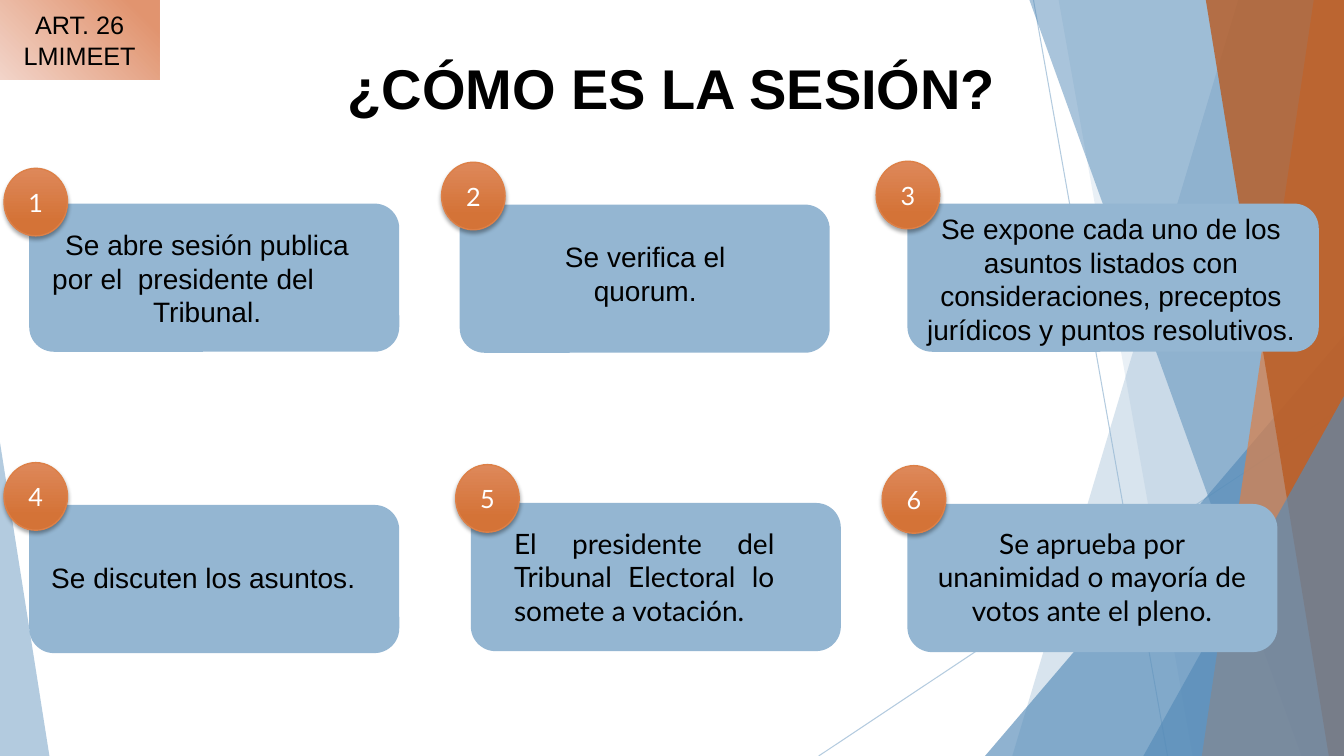
from lxml.etree import SubElement
from pptx import Presentation
from pptx.dml.color import RGBColor
from pptx.enum.shapes import MSO_CONNECTOR, MSO_SHAPE
from pptx.enum.text import MSO_ANCHOR, MSO_AUTO_SIZE, PP_ALIGN
from pptx.oxml.ns import qn
from pptx.util import Pt

PX = 9144
WIDTH, HEIGHT = 1333, 750
COLORS = {
    "sky": "94B6D2", "blue": "558BB8", "orange": "DD8047", "rust": "B95B22",
    "badge_top": "DE885A", "badge_bottom": "D47337",
    "tag_light": "F2D4C9", "tag_dark": "E1946F",
    "black": "000000", "white": "FFFFFF",
}
FORMATS = {
    "title": {"name": "Arial", "size": Pt(40), "bold": True},
    "arial": {"name": "Arial", "size": Pt(20)},
    "lato": {"name": "Lato", "size": Pt(20)},
    "badge": {"name": "Lato", "size": Pt(18)},
    "tag": {"name": "Arial", "size": Pt(18)},
}
BOX_HEIGHT = 147
BADGE_SIZE = (63, 67)
LEFT, CENTER, JUSTIFY = PP_ALIGN.LEFT, PP_ALIGN.CENTER, PP_ALIGN.JUSTIFY


class SlideBuilder:
    """Draw styled elements on one slide, with lengths in px."""

    def __init__(self, presentation):
        self.slide = presentation.slides.add_slide(presentation.slide_layouts[5])
        self.shapes = self.slide.shapes

    def color(self, name):
        return RGBColor.from_string(COLORS[name])

    def scale(self, lengths):
        return [length * PX for length in lengths]

    def set_alpha(self, shape, percent):
        for color in shape._element.spPr.iter(qn("a:srgbClr")):
            SubElement(color, qn("a:alpha"), val=str(percent * 1000))

    def paint(self, shape, color, alpha=100):
        shape.shadow.inherit = False
        shape.line.fill.background()
        shape.fill.solid()
        shape.fill.fore_color.rgb = self.color(color)
        if alpha < 100:
            self.set_alpha(shape, alpha)

    def paint_gradient(self, shape, colors, end, angle):
        shape.shadow.inherit = False
        shape.line.fill.background()
        shape.fill.gradient()
        shape.fill.gradient_angle = angle
        for stop, name, position in zip(shape.fill.gradient_stops, colors, (0, end)):
            stop.color.rgb = self.color(name)
            stop.position = position

    def set_text(self, shape, text, style, align=CENTER, color="black", anchor=MSO_ANCHOR.MIDDLE):
        frame = shape.text_frame
        frame.word_wrap = True
        frame.vertical_anchor = anchor
        paragraph = frame.paragraphs[0]
        paragraph.alignment = align
        run = paragraph.add_run()
        run.text = text
        for name, value in FORMATS[style].items():
            setattr(run.font, name, value)
        run.font.color.rgb = self.color(color)

    def title(self, bounds, text):
        shape = self.shapes.title
        for name, value in zip(("left", "top", "width", "height"), self.scale(bounds)):
            setattr(shape, name, value)
        shape.text_frame.auto_size = MSO_AUTO_SIZE.NONE
        self.set_text(shape, text, "title")

    def line(self, *ends):
        connector = self.shapes.add_connector(MSO_CONNECTOR.STRAIGHT, *self.scale(ends))
        connector.line.width = Pt(0.75)
        connector.line.color.rgb = self.color("sky")
        self.set_alpha(connector, 70)
        SubElement(connector._element.spPr, qn("a:effectLst"))

    def band(self, points, color, alpha):
        builder = self.shapes.build_freeform(*points[0], scale=PX)
        builder.add_line_segments(points[1:], close=True)
        self.paint(builder.convert_to_shape(), color, alpha)

    def triangle(self, bounds, apex, color, alpha):
        shape = self.shapes.add_shape(MSO_SHAPE.ISOSCELES_TRIANGLE, *self.scale(bounds))
        shape.adjustments[0] = apex
        self.paint(shape, color, alpha)

    def box(self, left, top, width):
        bounds = self.scale((left, top, width, BOX_HEIGHT))
        self.paint(self.shapes.add_shape(MSO_SHAPE.ROUNDED_RECTANGLE, *bounds), "sky")

    def text(self, bounds, text, style, align):
        shape = self.shapes.add_textbox(*self.scale(bounds))
        self.set_text(shape, text, style, align, anchor=MSO_ANCHOR.TOP)
        shape.text_frame.auto_size = MSO_AUTO_SIZE.SHAPE_TO_FIT_TEXT

    def badge(self, position, number):
        shape = self.shapes.add_shape(MSO_SHAPE.OVAL, *self.scale(position + BADGE_SIZE))
        self.paint_gradient(shape, ("badge_top", "badge_bottom"), 0.78, 270)
        shape.line.color.rgb = self.color("orange")
        shape.line.width = Pt(1)
        effects = shape._element.spPr.find(qn("a:effectLst"))
        shadow = SubElement(effects, qn("a:outerShdw"), blurRad=str(Pt(3)),
                            dist=str(Pt(2)), dir="5400000", rotWithShape="0")
        color = SubElement(shadow, qn("a:srgbClr"), val=COLORS["black"])
        SubElement(color, qn("a:alpha"), val="35000")
        self.set_text(shape, str(number), "badge", color="white")

    def tag(self, bounds, text):
        shape = self.shapes.add_shape(MSO_SHAPE.RECTANGLE, *self.scale(bounds))
        self.paint_gradient(shape, ("tag_light", "tag_dark"), 0.88, 45)
        self.set_text(shape, text, "tag")


BANDS_BEHIND = [(1228, 1004, "sky", 36), (1050, 1183, "sky", 20)]
BANDS_FRONT = [(1021, 1291, "blue", 50), (1303, 1192, "orange", 70), (1196, 1318, "rust", 80)]
STEPS = [
    ((29, 202, 367), (42, 221, 327, 111), (4, 167), "arial", CENTER,
     "Se abre sesión publica por el  presidente del \t\tTribunal."),
    ((456, 203, 367), (501, 233, 278, 77), (438, 161), "arial", CENTER,
     "Se verifica el quorum."),
    ((900, 202, 408), (898, 205, 408, 145), (869, 160), "arial", CENTER,
     "Se expone cada uno de los asuntos listados con consideraciones, "
     "preceptos jurídicos y puntos resolutivos."),
    ((29, 501, 367), (41, 551, 341, 44), (4, 459), "arial", LEFT,
     "Se discuten los asuntos."),
    ((467, 499, 367), (500, 517, 278, 111), (452, 461), "lato", JUSTIFY,
     "El presidente del Tribunal Electoral lo somete a votación."),
    ((900, 500, 367), (912, 517, 342, 111), (875, 462), "lato", CENTER,
     "Se aprueba por unanimidad o mayoría de votos ante el pleno."),
]


def draw_bands(builder, bands):
    for top, bottom, color, alpha in bands:
        points = [(top, 0), (WIDTH, 0), (WIDTH, HEIGHT), (bottom, HEIGHT)]
        builder.band(points, color, alpha)


def main():
    presentation = Presentation()
    presentation.slide_width = WIDTH * PX
    presentation.slide_height = HEIGHT * PX
    builder = SlideBuilder(presentation)
    builder.line(1025, 0, 1158, HEIGHT)
    builder.line(WIDTH, 403, 812, HEIGHT)
    draw_bands(builder, BANDS_BEHIND)
    builder.triangle((977, 333, 356, 417), 1, "blue", 66)
    draw_bands(builder, BANDS_FRONT)
    builder.triangle((1134, 393, 199, 357), 1, "blue", 66)
    builder.triangle((0, 439, 49, 311), 0, "sky", 70)
    builder.title((312, 62, 708, 49), "¿CÓMO ES LA SESIÓN?")
    for number, (box, bounds, badge, style, align, text) in enumerate(STEPS, 1):
        builder.box(*box)
        builder.text(bounds, text, style, align)
        builder.badge(badge, number)
    builder.tag((0, 0, 158, 79), "ART. 26 LMIMEET")
    presentation.save("out.pptx")


if __name__ == "__main__":
    main()
